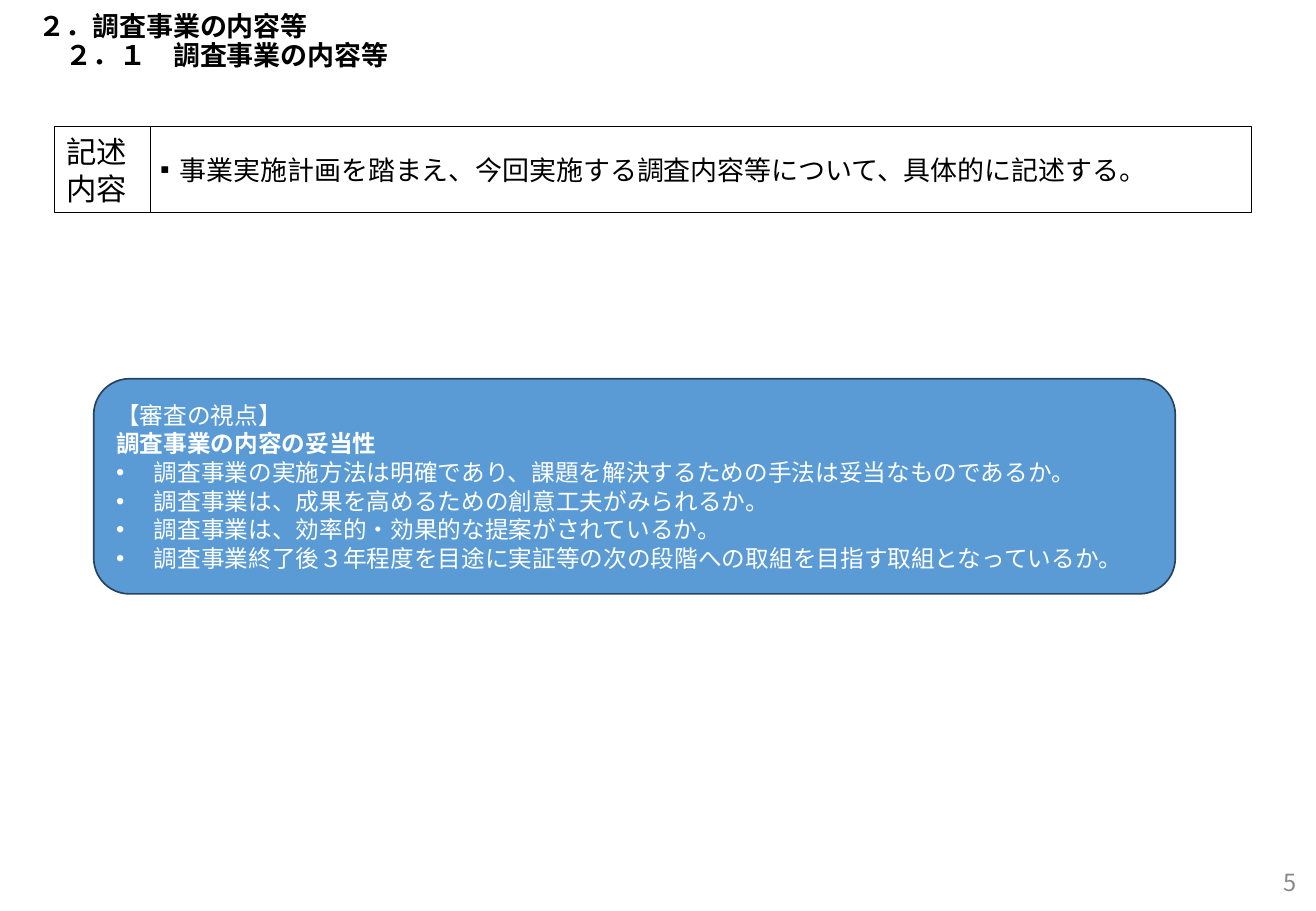
from dataclasses import dataclass

from lxml.etree import SubElement
from pptx import Presentation
from pptx.dml.color import RGBColor
from pptx.enum.shapes import MSO_SHAPE
from pptx.enum.text import MSO_ANCHOR, PP_ALIGN
from pptx.oxml.ns import qn
from pptx.slide import Slide
from pptx.text.text import TextFrame
from pptx.util import Cm, Pt

FONT = "Noto Sans CJK JP"
COLOURS = {
    "black": "000000",
    "white": "FFFFFF",
    "grey": "898989",
    "blue": "5B9BD5",
    "navy": "28445D",
}


@dataclass(frozen=True)
class Line:
    text: str
    bold: bool = False
    bullet: str = ""
    indent: float = 0


@dataclass(frozen=True)
class Box:
    left: float
    top: float
    width: float
    height: float
    lines: tuple[Line, ...]
    size: float
    spacing: float
    colour: str = "black"
    anchor: MSO_ANCHOR = MSO_ANCHOR.MIDDLE
    align: PP_ALIGN = PP_ALIGN.LEFT
    insets: tuple[float, float, float, float] = (0.25, 0.13, 0.25, 0.13)
    shape: MSO_SHAPE | None = None
    fill: str = "white"
    outline: str = "black"
    outline_width: float = 0.5


CRITERIA = (
    "調査事業の実施方法は明確であり、課題を解決するための手法は妥当なものであるか。",
    "調査事業は、成果を高めるための創意工夫がみられるか。",
    "調査事業は、効率的・効果的な提案がされているか。",
    "調査事業終了後３年程度を目途に実証等の次の段階への取組を目指す取組となっているか。",
)

BOXES = (
    Box(0.56, 0.13, 26.42, 1.52,
        (Line("２．調査事業の内容等\n　２．１　調査事業の内容等", bold=True),),
        size=16, spacing=17.3, anchor=MSO_ANCHOR.TOP),
    Box(19.84, 18.34, 7.52, 0.53, (Line("5"),), size=14, spacing=17,
        colour="grey", anchor=MSO_ANCHOR.BOTTOM, align=PP_ALIGN.RIGHT),
    Box(3.15, 2.64, 23.01, 1.8,
        (Line("事業実施計画を踏まえ、今回実施する調査内容等について、具体的に記述する。",
              bullet="▪", indent=0.41),),
        size=16, spacing=19.5, insets=(0.2, 0, 0.1, 0),
        shape=MSO_SHAPE.RECTANGLE),
    Box(1.14, 2.64, 2.01, 1.8, (Line("記述内容"),), size=18, spacing=22,
        shape=MSO_SHAPE.RECTANGLE),
    Box(1.96, 7.92, 22.61, 4.5,
        (Line("【審査の視点】"), Line("調査事業の内容の妥当性", bold=True),
         *(Line(text, bullet="•", indent=0.79) for text in CRITERIA)),
        size=14, spacing=17, colour="white", shape=MSO_SHAPE.ROUNDED_RECTANGLE,
        fill="blue", outline="navy", outline_width=1),
)


def colour_of(name: str) -> RGBColor:
    return RGBColor.from_string(COLOURS[name])


def write_lines(frame: TextFrame, box: Box) -> None:
    frame.word_wrap = True
    frame.vertical_anchor = box.anchor
    (frame.margin_left, frame.margin_top,
     frame.margin_right, frame.margin_bottom) = map(Cm, box.insets)
    for index, line in enumerate(box.lines):
        paragraph = frame.add_paragraph() if index else frame.paragraphs[0]
        paragraph.text = line.text
        paragraph.alignment = box.align
        paragraph.line_spacing = Pt(box.spacing)
        properties = paragraph._p.get_or_add_pPr()
        if line.bullet:
            properties.set("marL", str(Cm(line.indent)))
            properties.set("indent", str(-Cm(line.indent)))
            SubElement(properties, qn("a:buFont"), typeface="Arial")
            SubElement(properties, qn("a:buChar"), char=line.bullet)
        font = paragraph.font
        font.name = FONT
        font.size = Pt(box.size)
        font.bold = line.bold
        font.color.rgb = colour_of(box.colour)
        SubElement(properties.find(qn("a:defRPr")), qn("a:ea"), typeface=FONT)


def draw_box(page: Slide, box: Box) -> None:
    place = [Cm(n) for n in (box.left, box.top, box.width, box.height)]
    if box.shape is None:
        item = page.shapes.add_textbox(*place)
    else:
        item = page.shapes.add_shape(box.shape, *place)
        item.shadow.inherit = False
        item.fill.solid()
        item.fill.fore_color.rgb = colour_of(box.fill)
        item.line.color.rgb = colour_of(box.outline)
        item.line.width = Pt(box.outline_width)
    write_lines(item.text_frame, box)


def main() -> None:
    deck = Presentation()
    deck.slide_width, deck.slide_height = Cm(27.51), Cm(19.05)
    page = deck.slides.add_slide(deck.slide_layouts[6])
    for box in BOXES:
        draw_box(page, box)
    deck.save("out.pptx")


if __name__ == "__main__":
    main()
